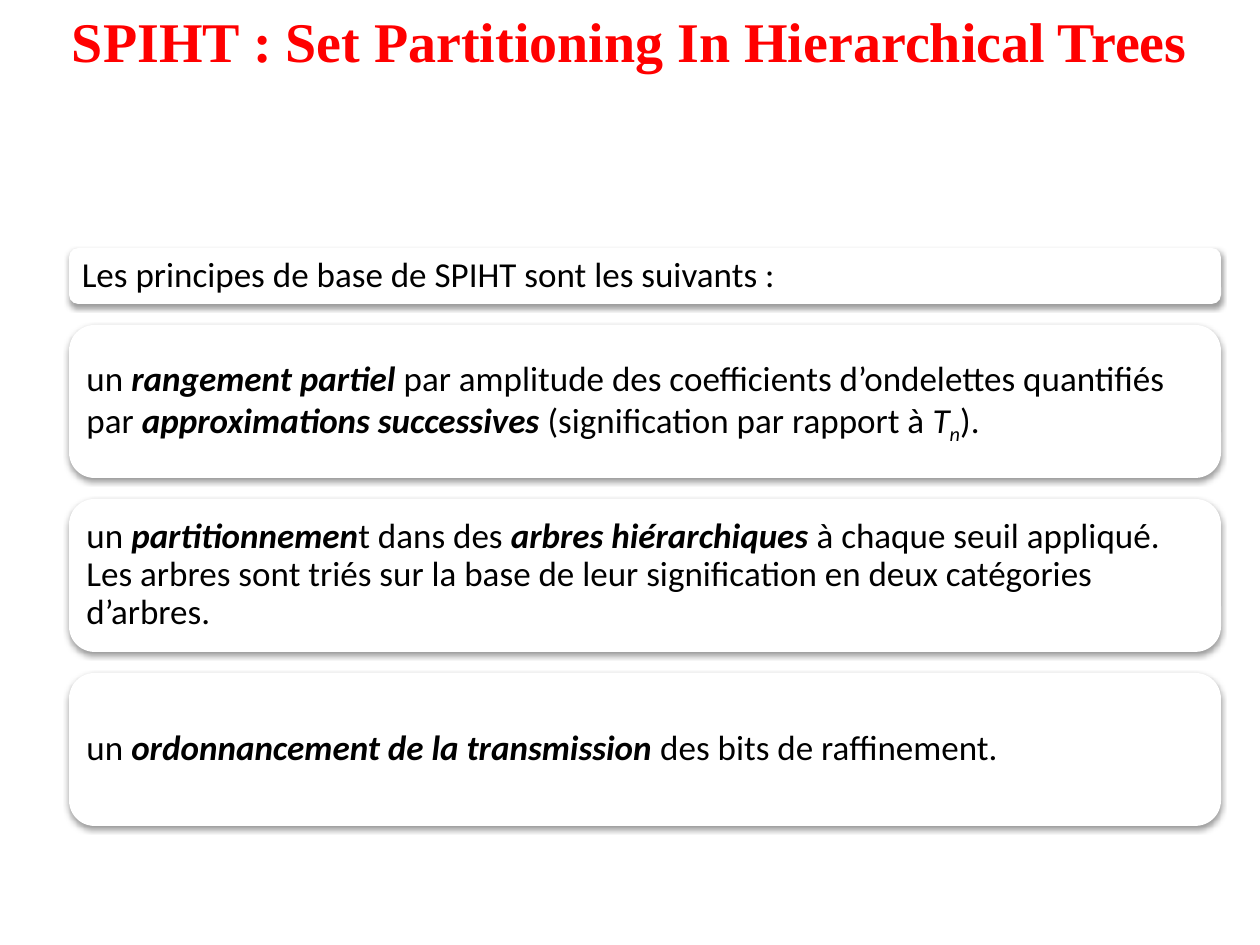
from dataclasses import dataclass

from lxml import etree
from pptx import Presentation
from pptx.dml.color import RGBColor
from pptx.enum.shapes import MSO_SHAPE
from pptx.enum.text import MSO_ANCHOR, PP_ALIGN
from pptx.oxml.ns import qn
from pptx.util import Emu, Pt


@dataclass(frozen=True)
class Theme:
    title: RGBColor = RGBColor(0xFF, 0x00, 0x00)
    ink: RGBColor = RGBColor(0x00, 0x00, 0x00)
    card: RGBColor = RGBColor(0xFF, 0xFF, 0xFF)
    shadow: str = "000000"
    title_font: str = "Times New Roman"
    body_font: str = "Calibri"
    title_size: int = 32
    body_size: int = 20


THEME = Theme()
PLAIN, STRONG, ITALIC, SUB = "plain", "strong", "italic", "sub"

TITLE = "SPIHT : Set Partitioning In Hierarchical Trees"
# Each card: height in px, then its runs
CARDS = [
    (56, [("Les principes de base de SPIHT sont les suivants :", PLAIN)]),
    (153, [("un ", PLAIN), ("rangement partiel ", STRONG),
           ("par amplitude des coefficients d’ondelettes quantifiés par ", PLAIN),
           ("approximations successives ", STRONG),
           ("(signification par rapport à ", PLAIN),
           ("T", ITALIC), ("n", SUB), (").", PLAIN)]),
    (153, [("un ", PLAIN), ("partitionnemen", STRONG), ("t dans des ", PLAIN),
           ("arbres hiérarchiques ", STRONG),
           ("à chaque seuil appliqué. Les arbres sont triés sur la base de "
            "leur signification en deux catégories d’arbres.", PLAIN)]),
    (153, [("un ", PLAIN), ("ordonnancement de la transmission ", STRONG),
           ("des bits de raffinement.", PLAIN)]),
]


def px(n):
    return Emu(round(n * 914400 / 126))


def add_shadow(sp):
    effects = etree.SubElement(sp._element.spPr, qn("a:effectLst"))
    shadow = etree.SubElement(effects, qn("a:outerShdw"), blurRad=str(Pt(3.1)),
                              dist=str(Pt(1.6)), dir="5400000", rotWithShape="0")
    color = etree.SubElement(shadow, qn("a:srgbClr"), val=THEME.shadow)
    etree.SubElement(color, qn("a:alpha"), val="38000")


def style_run(r, font, size, color):
    r.font.name, r.font.size = font, Pt(size)
    r.font.color.rgb = color


def add_title(s, x, y, w, h):
    tf = s.shapes.add_textbox(px(x), px(y), px(w), px(h)).text_frame
    tf.word_wrap = True
    p = tf.paragraphs[0]
    p.text = TITLE
    p.alignment = PP_ALIGN.CENTER
    r = p.runs[0]
    style_run(r, THEME.title_font, THEME.title_size, THEME.title)
    r.font.bold = True


def add_card(s, x, y, w, h, runs):
    sp = s.shapes.add_shape(MSO_SHAPE.ROUNDED_RECTANGLE, px(x), px(y), px(w), px(h))
    sp.fill.solid()
    sp.fill.fore_color.rgb = THEME.card
    sp.line.fill.background()
    add_shadow(sp)

    tf = sp.text_frame
    tf.word_wrap = True
    tf.vertical_anchor = MSO_ANCHOR.MIDDLE
    tf.margin_left = tf.margin_right = tf.margin_top = tf.margin_bottom = px(10)
    p = tf.paragraphs[0]
    p.alignment = PP_ALIGN.LEFT
    p.line_spacing = 0.9
    for text, kind in runs:
        r = p.add_run()
        r.text = text
        style_run(r, THEME.body_font, THEME.body_size, THEME.ink)
        r.font.bold = kind == STRONG
        r.font.italic = kind != PLAIN
        if kind == SUB:
            r.font._element.set("baseline", "-25000")


def add_cards(s, x, y, w, gap):
    for h, runs in CARDS:
        add_card(s, x, y, w, h, runs)
        y += h + gap


def main():
    prs = Presentation()
    prs.slide_width, prs.slide_height = px(1260), px(945)
    s = prs.slides.add_slide(prs.slide_layouts[6])
    add_cards(s, 69, 248, 1152, 21)
    add_title(s, 0, 0, 1260, 149)
    prs.save("out.pptx")


if __name__ == "__main__":
    main()
